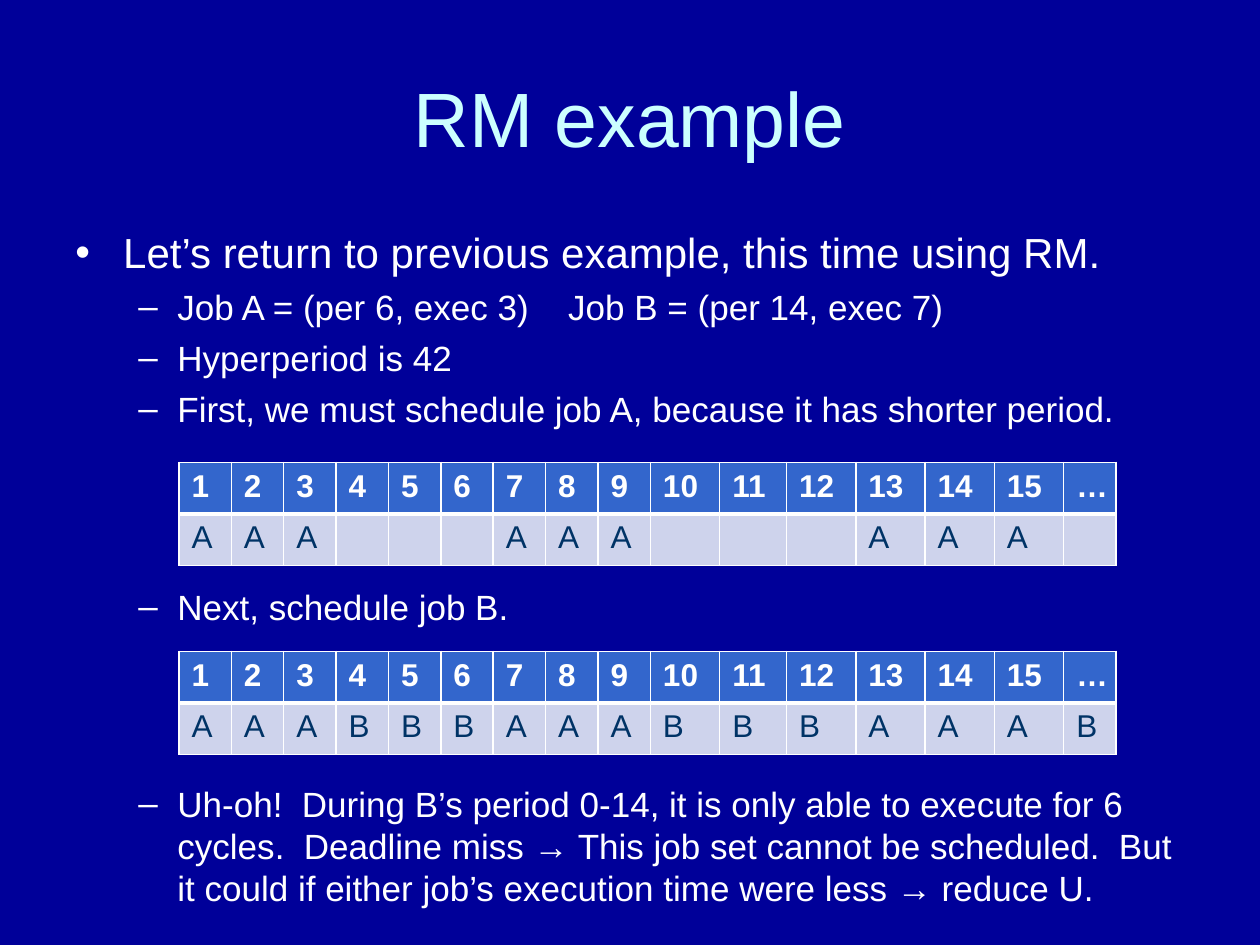
from dataclasses import dataclass

from lxml import etree
from pptx import Presentation
from pptx.dml.color import RGBColor
from pptx.enum.text import MSO_ANCHOR, PP_ALIGN
from pptx.oxml.ns import qn
from pptx.util import Inches, Pt

MIDDLE = MSO_ANCHOR.MIDDLE
CENTER = PP_ALIGN.CENTER
TITLE_ONLY = 5


@dataclass(frozen=True)
class Theme:
    font: str = "Arial"
    background: str = "000099"
    title: str = "CCFFFF"
    light: str = "FFFFFF"
    dark: str = "003366"
    header_fill: str = "3366CC"
    job_fill: str = "CED3EC"
    title_size: int = 44
    bullet_size: int = 24
    detail_size: int = 20
    cell_size: int = 18


@dataclass(frozen=True)
class Level:
    number: int
    mark: str
    margin: float
    hanging: float
    size: int


@dataclass(frozen=True)
class Bullet:
    level: Level
    phrases: tuple[str, ...]
    before: float = 5


@dataclass(frozen=True)
class Schedule:
    top: float
    jobs: str


THEME = Theme()
MAIN = Level(0, "•", 0.38, 0.38, THEME.bullet_size)
DETAIL = Level(1, "–", 0.81, 0.31, THEME.detail_size)
PHRASE_GAP = 16.7  # points added to the space between the phrases of a bullet
TABLE_ROOM = 89  # points above a bullet that follows a table

BULLETS = [
    Bullet(MAIN, ("Let’s return to previous example, this time using RM.",), 3),
    Bullet(DETAIL, ("Job A = (per 6, exec 3)", "Job B = (per 14, exec 7)")),
    Bullet(DETAIL, ("Hyperperiod is 42",)),
    Bullet(DETAIL, ("First, we must schedule job A, because it has shorter period.",)),
    Bullet(DETAIL, ("Next, schedule job B.",), TABLE_ROOM),
    Bullet(DETAIL, ("Uh-oh!  During B’s period 0-14, it is only able to execute for 6 "
                    "cycles.  Deadline miss → This job set cannot be scheduled.  But "
                    "it could if either job’s execution time were less → reduce U.",),
           TABLE_ROOM),
]
SCHEDULES = [Schedule(3.67, "AAA   AAA   AAA "), Schedule(5.17, "AAABBBAAABBBAAAB")]

SLOTS = [str(slot) for slot in range(1, 16)] + ["…"]
TABLE_LEFT, TABLE_WIDTH, ROW_HEIGHT = 1.42, 7.44, 0.41
WIDE_COLUMNS = {"10": 0.55, "11": 0.53, "12": 0.55, "13": 0.55, "14": 0.55, "15": 0.55}
NARROW_COLUMN = ((TABLE_WIDTH - sum(WIDE_COLUMNS.values()))
                 / (len(SLOTS) - len(WIDE_COLUMNS)))


def format_font(font, size: int, color: str, bold: bool = False) -> None:
    values = {"name": THEME.font, "size": Pt(size), "bold": bold}
    for name, value in values.items():
        setattr(font, name, value)
    font.color.rgb = RGBColor.from_string(color)


def place(shape, left: float, top: float, width: float, height: float) -> None:
    values = {"left": left, "top": top, "width": width, "height": height}
    for name, value in values.items():
        setattr(shape, name, Inches(value))


def draw_title(page, text: str) -> None:
    title = page.shapes.title
    place(title, 0.5, 0.3, 9, 1.25)
    frame = title.text_frame
    frame.text = text
    frame.vertical_anchor = MIDDLE
    para = frame.paragraphs[0]
    para.alignment = CENTER
    format_font(para.runs[0].font, THEME.title_size, THEME.title)


def write_bullet(para, bullet: Bullet) -> None:
    level = bullet.level
    para.level = level.number
    para.space_before = Pt(bullet.before)
    properties = para._p.get_or_add_pPr()
    properties.set("marL", str(Inches(level.margin)))
    properties.set("indent", str(-Inches(level.hanging)))
    etree.SubElement(properties, qn("a:buFont"), typeface=THEME.font)
    etree.SubElement(properties, qn("a:buChar"), char=level.mark)
    for index, phrase in enumerate(bullet.phrases):
        if index:
            gap = para.add_run()
            gap.text = " "
            format_font(gap.font, level.size, THEME.light)
            gap._r.get_or_add_rPr().set("spc", str(round(PHRASE_GAP * 100)))
        span = para.add_run()
        span.text = phrase
        format_font(span.font, level.size, THEME.light)


def draw_bullets(page, bullets: list[Bullet]) -> None:
    box = page.shapes.add_textbox(Inches(0.5), Inches(1.75), Inches(9), Inches(4.95))
    frame = box.text_frame
    frame.word_wrap = True
    for index, bullet in enumerate(bullets):
        para = frame.add_paragraph() if index else frame.paragraphs[0]
        write_bullet(para, bullet)


def set_borders(cell, widths: dict[str, float]) -> None:
    """Put the border lines ahead of the fill, as the cell schema requires."""
    properties = cell._tc.get_or_add_tcPr()
    for position, (side, width) in enumerate(widths.items()):
        line = etree.Element(qn(f"a:{side}"), w=str(Pt(width)))
        fill = etree.SubElement(line, qn("a:solidFill"))
        etree.SubElement(fill, qn("a:srgbClr"), val=THEME.light)
        properties.insert(position, line)


def draw_schedule(page, schedule: Schedule) -> None:
    table = page.shapes.add_table(
        2, len(SLOTS), Inches(TABLE_LEFT), Inches(schedule.top),
        Inches(TABLE_WIDTH), Inches(2 * ROW_HEIGHT)).table
    for column, slot in zip(table.columns, SLOTS):
        column.width = Inches(WIDE_COLUMNS.get(slot, NARROW_COLUMN))
    rows = [
        (SLOTS, THEME.header_fill, THEME.light, True, 1, 3),
        (schedule.jobs, THEME.job_fill, THEME.dark, False, 3, 1),
    ]
    for row, (texts, fill, color, bold, above, below) in zip(table.rows, rows):
        row.height = Inches(ROW_HEIGHT)
        for cell, text in zip(row.cells, texts):
            cell.text = text.strip()
            format_font(cell.text_frame.paragraphs[0].font, THEME.cell_size, color, bold)
            cell.fill.solid()
            cell.fill.fore_color.rgb = RGBColor.from_string(fill)
            set_borders(cell, {"lnL": 1, "lnR": 1, "lnT": above, "lnB": below})


def main() -> None:
    deck = Presentation()
    deck.slide_width, deck.slide_height = Inches(10), Inches(7.5)
    page = deck.slides.add_slide(deck.slide_layouts[TITLE_ONLY])
    page.background.fill.solid()
    page.background.fill.fore_color.rgb = RGBColor.from_string(THEME.background)
    draw_title(page, "RM example")
    draw_bullets(page, BULLETS)
    for schedule in SCHEDULES:
        draw_schedule(page, schedule)
    deck.save("out.pptx")


if __name__ == "__main__":
    main()
